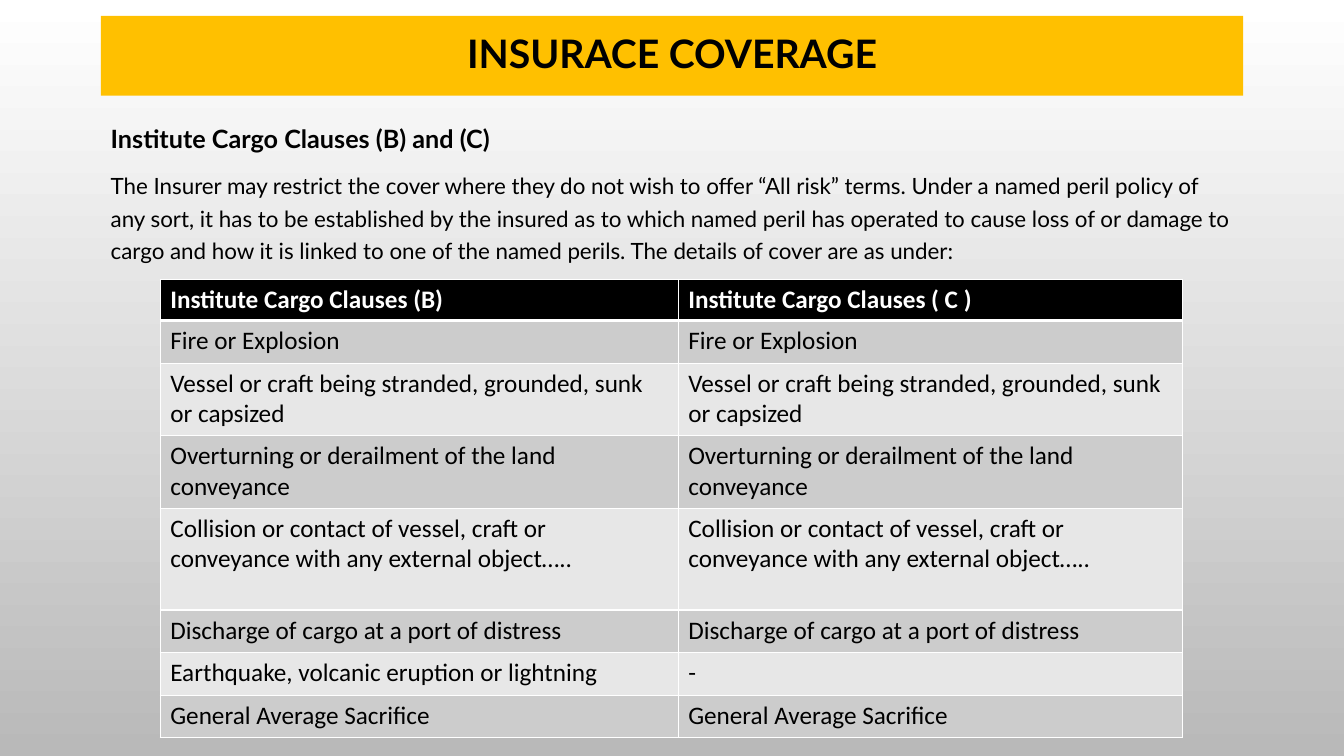
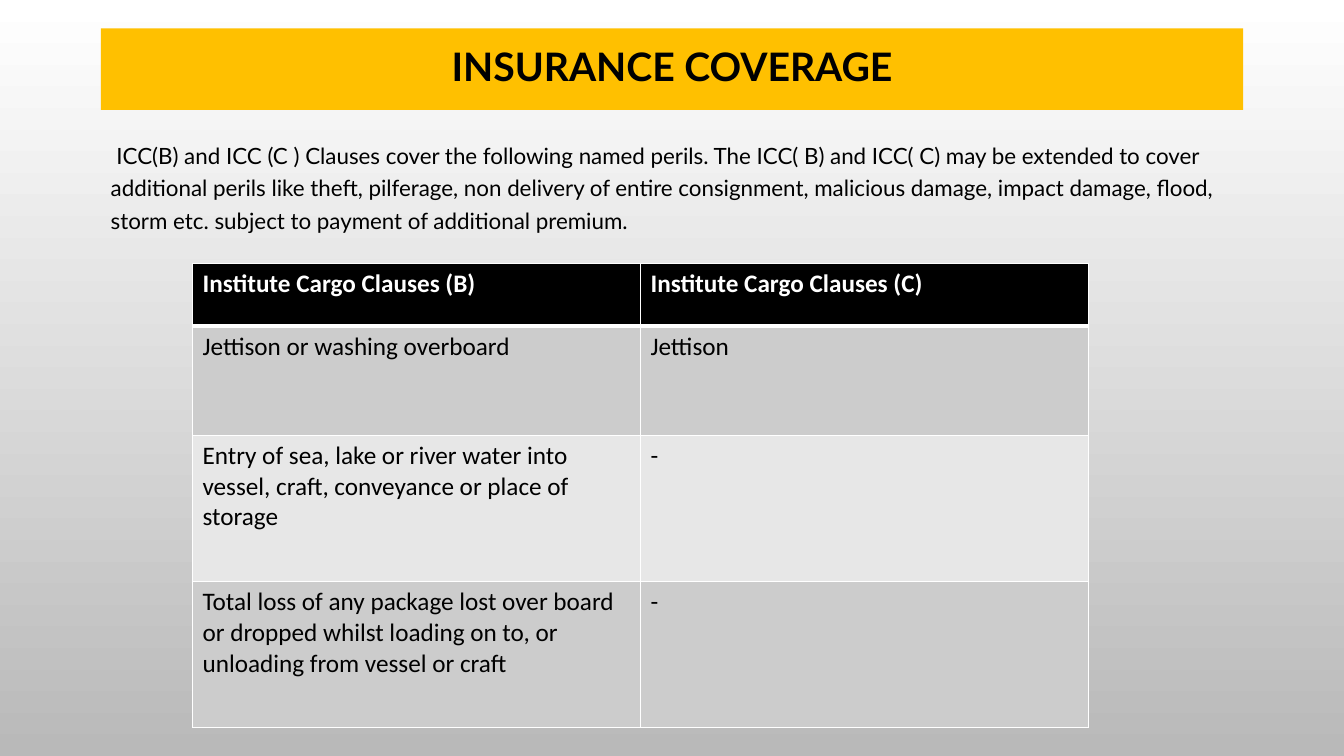
from lxml import etree
from pptx import Presentation
from pptx.dml.color import RGBColor
from pptx.enum import shapes, text
from pptx.oxml import ns
from pptx.util import Pt

INK = {"text": "000000", "band": "FFC000", "head": "000000", "light": "FFFFFF",
       "odd": "CCCCCC", "even": "E7E7E7", "top": "FFFFFF", "foot": "B9B9B9"}
LEFT, WIDE = 72, 816

FIRE = "Fire or Explosion"
STRAND = "Vessel or craft being stranded, grounded, sunk or capsized"
TURN = "Overturning or derailment of the land conveyance"
HIT = "Collision or contact of vessel, craft or conveyance with any external object….."
PORT = "Discharge of cargo at a port of distress"
LOSS = "General Average Sacrifice"

SLIDES = [
    {"title": "INSURACE COVERAGE", "band": (11.3, 57),
     "body": (80, 444),
     "paras": [
         ("Institute Cargo Clauses (B) and (C)", 18, True),
         ("The Insurer may restrict the cover where they do not wish to offer “All risk” terms. "
          "Under a named peril policy of any sort, it has to be established by the insured as to "
          "which named peril has operated to cause loss of or damage to cargo and how it is linked "
          "to one of the named perils. The details of cover are as under:", 16, False)],
     "spot": (114.5, 199.5), "cols": (370, 360),
     "rows": [
         (29.5, "Institute Cargo Clauses (B)", "Institute Cargo Clauses ( C )"),
         (30.4, FIRE, FIRE),
         (51.8, STRAND, STRAND),
         (51.8, TURN, TURN),
         (72.8, HIT, HIT),
         (30.4, PORT, PORT),
         (30.4, "Earthquake, volcanic eruption or lightning", "-"),
         (30.4, LOSS, LOSS)]},
    {"title": "INSURANCE COVERAGE", "band": (20.2, 58.3),
     "body": (94.3, 78),
     "paras": [
         (" ICC(B) and ICC (C ) Clauses cover the following named perils. The ICC( B) and ICC( C) "
          "may be extended to cover additional perils like theft, pilferage, non delivery of entire "
          "consignment, malicious damage, impact damage, flood, storm etc. subject to payment of "
          "additional premium.", 16, False)],
     "spot": (137.5, 188), "cols": (320, 320),
     "rows": [
         (45, "Institute Cargo Clauses (B)", "Institute Cargo Clauses (C)"),
         (78, "Jettison or washing overboard", "Jettison"),
         (104.5, "Entry of sea, lake or river water into vessel, craft, conveyance or place of "
                 "storage", "-"),
         (104.5, "Total loss of any package lost over board or dropped whilst loading on to, or "
                 "unloading from vessel or craft", "-")]},
]


def paint(fill, name):
    fill.solid()
    fill.fore_color.rgb = RGBColor.from_string(INK[name])


def style(para, face, size, bold, name):
    font = para.font
    font.name, font.size, font.bold = face, Pt(size), bold
    font.color.rgb = RGBColor.from_string(INK[name])


def edge(cell, side, width):
    """Draw one light border line of a table cell."""
    line = etree.SubElement(cell._tc.get_or_add_tcPr(), ns.qn("a:ln" + side), w=str(Pt(width)))
    fill = etree.SubElement(line, ns.qn("a:solidFill"))
    etree.SubElement(fill, ns.qn("a:srgbClr"), val=INK["light"])


def add_band(slide, title, top, high):
    band = slide.shapes.add_shape(shapes.MSO_SHAPE.RECTANGLE, Pt(LEFT), Pt(top), Pt(WIDE), Pt(high))
    band.shadow.inherit = False
    paint(band.fill, "band")
    band.line.fill.background()
    frame = band.text_frame
    frame.vertical_anchor = text.MSO_ANCHOR.MIDDLE
    para = frame.paragraphs[0]
    para.text, para.alignment, para.line_spacing = title, text.PP_ALIGN.CENTER, 0.9
    style(para, "Lato", 28, True, "text")


def add_body(slide, paras, top, high):
    frame = slide.shapes.add_textbox(Pt(LEFT), Pt(top), Pt(WIDE), Pt(high)).text_frame
    frame.word_wrap = True
    for i, (words, size, bold) in enumerate(paras):
        para = frame.add_paragraph() if i else frame.paragraphs[0]
        para.text, para.line_spacing = words, 1.2
        if i:
            para.space_before = Pt(10)
        style(para, "Lato", size, bold, "text")


def add_grid(slide, spot, cols, rows):
    highs = [row[0] for row in rows]
    table = slide.shapes.add_table(len(rows), len(cols), *map(Pt, spot),
                                   Pt(sum(cols)), Pt(sum(highs))).table
    for col, width in zip(table.columns, cols):
        col.width = Pt(width)
    for r, (high, *words) in enumerate(rows):
        table.rows[r].height = Pt(high)
        head = r == 0
        shade = "head" if head else "odd" if r % 2 else "even"
        for c, word in enumerate(words):
            cell = table.cell(r, c)
            cell.text = word
            style(cell.text_frame.paragraphs[0], "Calibri", 18, head, "light" if head else "text")
            for side in "LRTB":
                thick = (head and side == "B") or (r == 1 and side == "T")
                edge(cell, side, 3 if thick else 1)
            paint(cell.fill, shade)


def main():
    deck = Presentation()
    deck.slide_width, deck.slide_height = Pt(960), Pt(540)
    back = deck.slide_master.background.fill
    back.gradient()
    back.gradient_angle = 270
    for stop, name in zip(back.gradient_stops, ("top", "foot")):
        stop.color.rgb = RGBColor.from_string(INK[name])
    for page in SLIDES:
        slide = deck.slides.add_slide(deck.slide_layouts[6])
        add_band(slide, page["title"], *page["band"])
        add_body(slide, page["paras"], *page["body"])
        add_grid(slide, page["spot"], page["cols"], page["rows"])
    deck.save("out.pptx")


if __name__ == "__main__":
    main()
